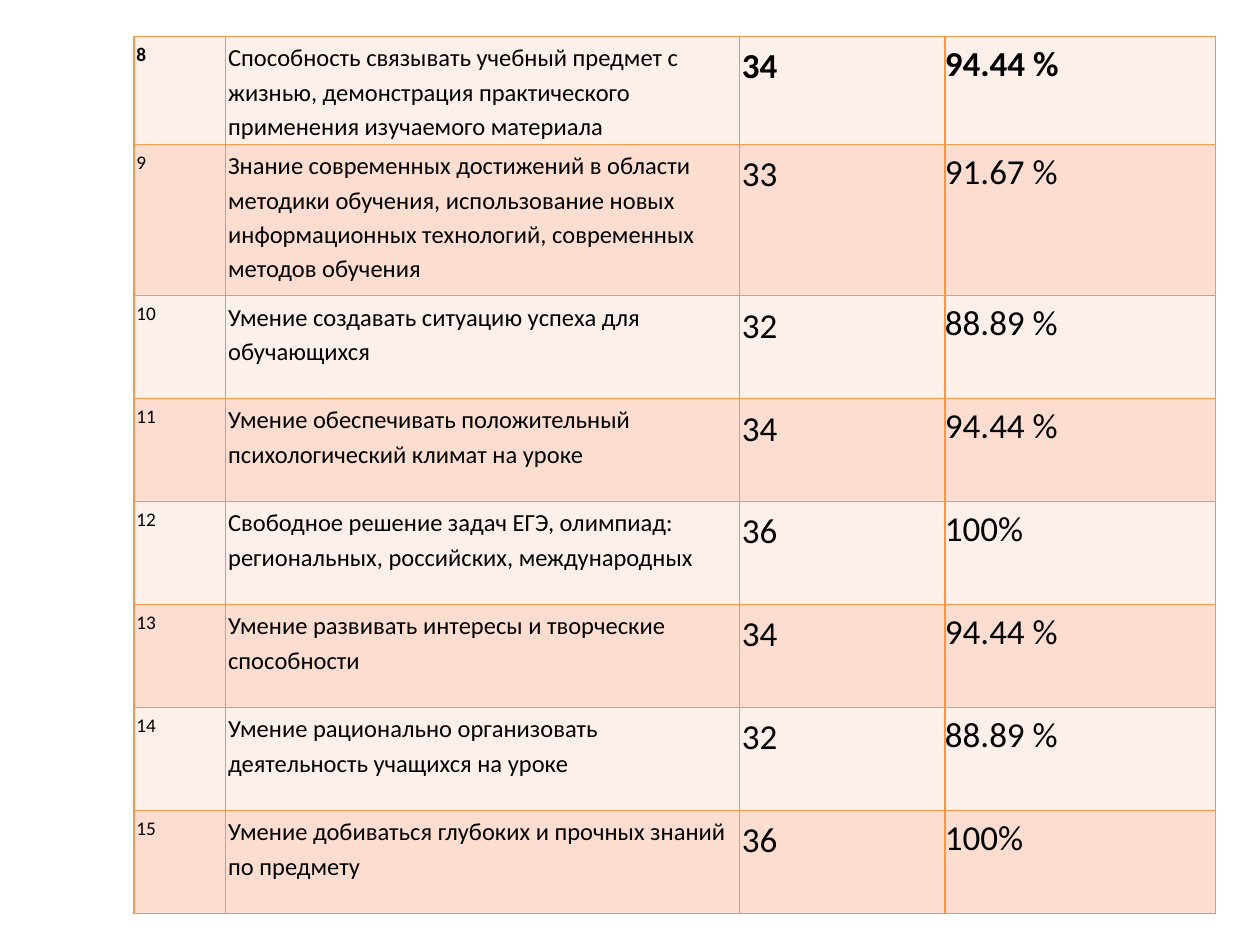
import pptx
import pptx.dml.color
import pptx.oxml
import pptx.oxml.ns
import pptx.util

Pt = pptx.util.Pt


def color(hex_value):
    return pptx.dml.color.RGBColor.from_string(hex_value)


def add_borders(cell, hex_value, width):
    tc_pr = cell._tc.get_or_add_tcPr()
    for side in ("lnL", "lnR", "lnT", "lnB"):
        tc_pr.append(pptx.oxml.parse_xml(
            f'<a:{side} {pptx.oxml.ns.nsdecls("a")} w="{Pt(width)}">'
            f'<a:solidFill><a:srgbClr val="{hex_value}"/></a:solidFill></a:{side}>'))


FIRST_NUMBER = 8
CRITERIA = [
    ("Способность связывать учебный предмет с жизнью, демонстрация практического "
     "применения изучаемого материала", "34", "94.44 %"),
    ("Знание современных достижений в области методики обучения, использование новых "
     "информационных технологий, современных методов обучения", "33", "91.67 %"),
    ("Умение создавать ситуацию успеха для обучающихся", "32", "88.89 %"),
    ("Умение обеспечивать положительный психологический климат на уроке", "34", "94.44 %"),
    ("Свободное решение задач ЕГЭ, олимпиад: региональных, российских, международных",
     "36", "100%"),
    ("Умение развивать интересы и творческие способности", "34", "94.44 %"),
    ("Умение рационально организовать деятельность учащихся на уроке", "32", "88.89 %"),
    ("Умение добиваться глубоких и прочных знаний по предмету", "36", "100%"),
]
COL_WIDTHS = [52.4, 293.6, 117.5, 154.5]
FONT_SIZES = [11, 14, 20, 20]
MARGINS = [1.5, 1.5, 1.5, 0]
ROW_HEIGHT, TALL_ROW_HEIGHT = 58.85, 86.4
BAND_FILLS = ["FDEFE9", "FCDDCF"]

prs = pptx.Presentation()
prs.slide_width, prs.slide_height = Pt(720), Pt(540)
s = prs.slides.add_slide(prs.slide_layouts[6])

table = s.shapes.add_table(len(CRITERIA), len(COL_WIDTHS), Pt(76.5), Pt(20.8),
                           Pt(sum(COL_WIDTHS)), Pt(500)).table
table.first_row = False
for column, width in zip(table.columns, COL_WIDTHS):
    column.width = Pt(width)

for row, criterion in enumerate(CRITERIA):
    table.rows[row].height = Pt(TALL_ROW_HEIGHT if row == 1 else ROW_HEIGHT)
    for col, text in enumerate((str(FIRST_NUMBER + row), *criterion)):
        cell = table.cell(row, col)
        add_borders(cell, "F79646", 1)
        cell.fill.solid()
        cell.fill.fore_color.rgb = color(BAND_FILLS[row % 2])
        cell.margin_left = cell.margin_right = Pt(MARGINS[col])
        cell.margin_top = cell.margin_bottom = Pt(MARGINS[col])
        p = cell.text_frame.paragraphs[0]
        p.text = text
        p.line_spacing = 1.15
        p.space_after = Pt(10)
        p.font.name = "Calibri"
        p.font.size = Pt(FONT_SIZES[col])
        p.font.bold = row == 0 and col != 1
        p.font.color.rgb = color("000000")

prs.save("out.pptx")
